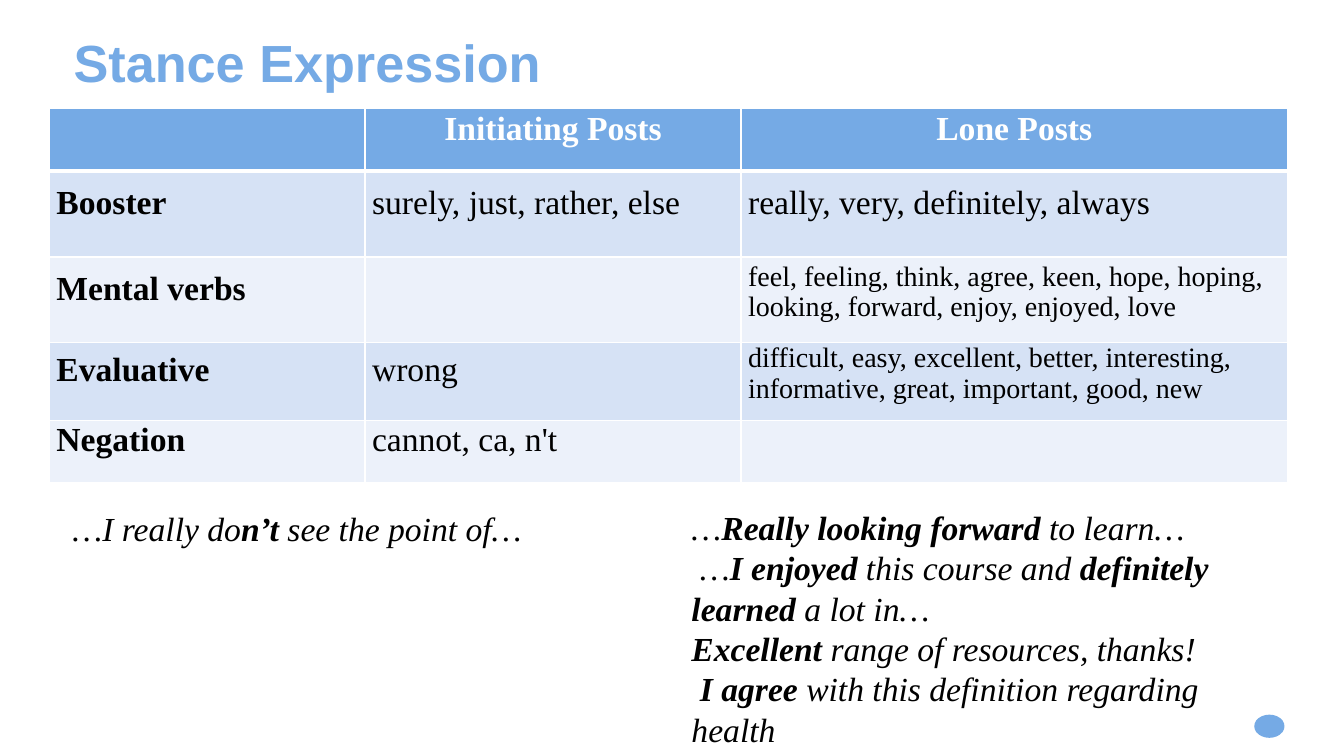
from lxml import etree
from pptx import Presentation
from pptx.dml.color import RGBColor
from pptx.enum import shapes, text
from pptx.oxml import ns
from pptx.util import Inches, Pt

BLUE = RGBColor(0x75, 0xAA, 0xE5)
PALE = RGBColor(0xD6, 0xE2, 0xF5)
MIST = RGBColor(0xEC, 0xF1, 0xFA)
WHITE = RGBColor(255, 255, 255)
BLACK = RGBColor(0, 0, 0)
SERIF = "Times New Roman"


def add_run(para, words, size, color, bold=False, italic=False, face=SERIF):
    run = para.add_run()
    run.text = words
    font = run.font
    font.name, font.size = face, Pt(size)
    font.bold, font.italic = bold, italic
    font.color.rgb = color


def add_edge(cell, side, width):
    edge = etree.SubElement(cell._tc.get_or_add_tcPr(), ns.qn("a:ln" + side), w=str(Pt(width)))
    fill = etree.SubElement(edge, ns.qn("a:solidFill"))
    etree.SubElement(fill, ns.qn("a:srgbClr"), val=str(WHITE))


deck = Presentation()
deck.slide_width, deck.slide_height = Inches(13.33), Inches(7.5)
slide = deck.slides.add_slide(deck.slide_layouts[5])

dot = slide.shapes.add_shape(
    shapes.MSO_SHAPE.OVAL, Inches(12.44), Inches(7.09), Inches(0.3), Inches(0.23))
dot.shadow.inherit = False
dot.fill.solid()
dot.fill.fore_color.rgb = BLUE
dot.line.fill.background()

title = slide.shapes.title
title.left, title.top = Inches(0.73), Inches(0.32)
title.width, title.height = Inches(9.78), Inches(0.55)
frame = title.text_frame
frame.margin_left = frame.margin_right = frame.margin_top = frame.margin_bottom = 0
frame.vertical_anchor = text.MSO_ANCHOR.TOP
frame.auto_size = text.MSO_AUTO_SIZE.NONE
para = frame.paragraphs[0]
para.alignment = text.PP_ALIGN.LEFT
para.line_spacing = Pt(43.5)
add_run(para, "Stance Expression", 37.3, BLUE, bold=True, face="Arial")

rows = [
    ["", "Initiating Posts", "Lone Posts"],
    ["Booster", "surely, just, rather, else", "really, very, definitely, always"],
    ["Mental verbs", "", "feel, feeling, think, agree, keen, hope, hoping,\n"
     "looking, forward, enjoy, enjoyed, love"],
    ["Evaluative", "wrong", "difficult, easy, excellent, better, interesting,\n"
     "informative, great, important, good, new"],
    ["Negation", "cannot, ca, n't", ""],
]
table = slide.shapes.add_table(
    5, 3, Inches(0.49), Inches(1.08), Inches(12.28), Inches(3.7)).table
for col, width in zip(table.columns, [3.13, 3.73, 5.42]):
    col.width = Inches(width)
for row, height in zip(table.rows, [0.62, 0.85, 0.85, 0.77, 0.62]):
    row.height = Inches(height)

for r, row in enumerate(rows):
    for c, words in enumerate(row):
        cell = table.cell(r, c)
        cell.margin_left = cell.margin_right = Inches(0.07)
        cell.margin_top = cell.margin_bottom = 0
        cell.vertical_anchor = text.MSO_ANCHOR.MIDDLE
        for side in "LRTB":
            heavy = (r, side) in [(0, "B"), (1, "T")]
            add_edge(cell, side, 3 if heavy else 1)
        cell.fill.solid()
        cell.fill.fore_color.rgb = BLUE if r == 0 else PALE if r % 2 else MIST
        if not words:
            continue
        lines = words.split("\n")
        for n, line in enumerate(lines):
            para = cell.text_frame.add_paragraph() if n else cell.text_frame.paragraphs[0]
            para.line_spacing = Pt(11)
            if n:
                para.space_before = Pt(11)
            if r == 0:
                para.alignment = text.PP_ALIGN.CENTER
            add_run(para, line, 20 if len(lines) > 1 else 24,
                    WHITE if r == 0 else BLACK, bold=r == 0 or c == 0)

quotes = [
    (6.76, 4.98, 2.52, [
        [("…", False), ("Really looking forward ", True), ("to learn…", False)],
        [(" …", False), ("I enjoyed", True), (" this course and ", False),
         ("definitely learned", True), (" a lot in…", False)],
        [("Excellent", True), (" range of resources, thanks!", False)],
        [(" I agree", True), (" with this definition regarding health", False)],
    ]),
    (0.62, 4.99, 0.91, [
        [("…I really do", False), ("n’t", True), (" see the point of…", False)],
    ]),
]
for left, top, height, paras in quotes:
    box = slide.shapes.add_textbox(Inches(left), Inches(top), Inches(6.01), Inches(height))
    frame = box.text_frame
    frame.word_wrap = True
    for n, parts in enumerate(paras):
        para = frame.add_paragraph() if n else frame.paragraphs[0]
        for words, bold in parts:
            add_run(para, words, 24, BLACK, bold, italic=True)

deck.save("out.pptx")
